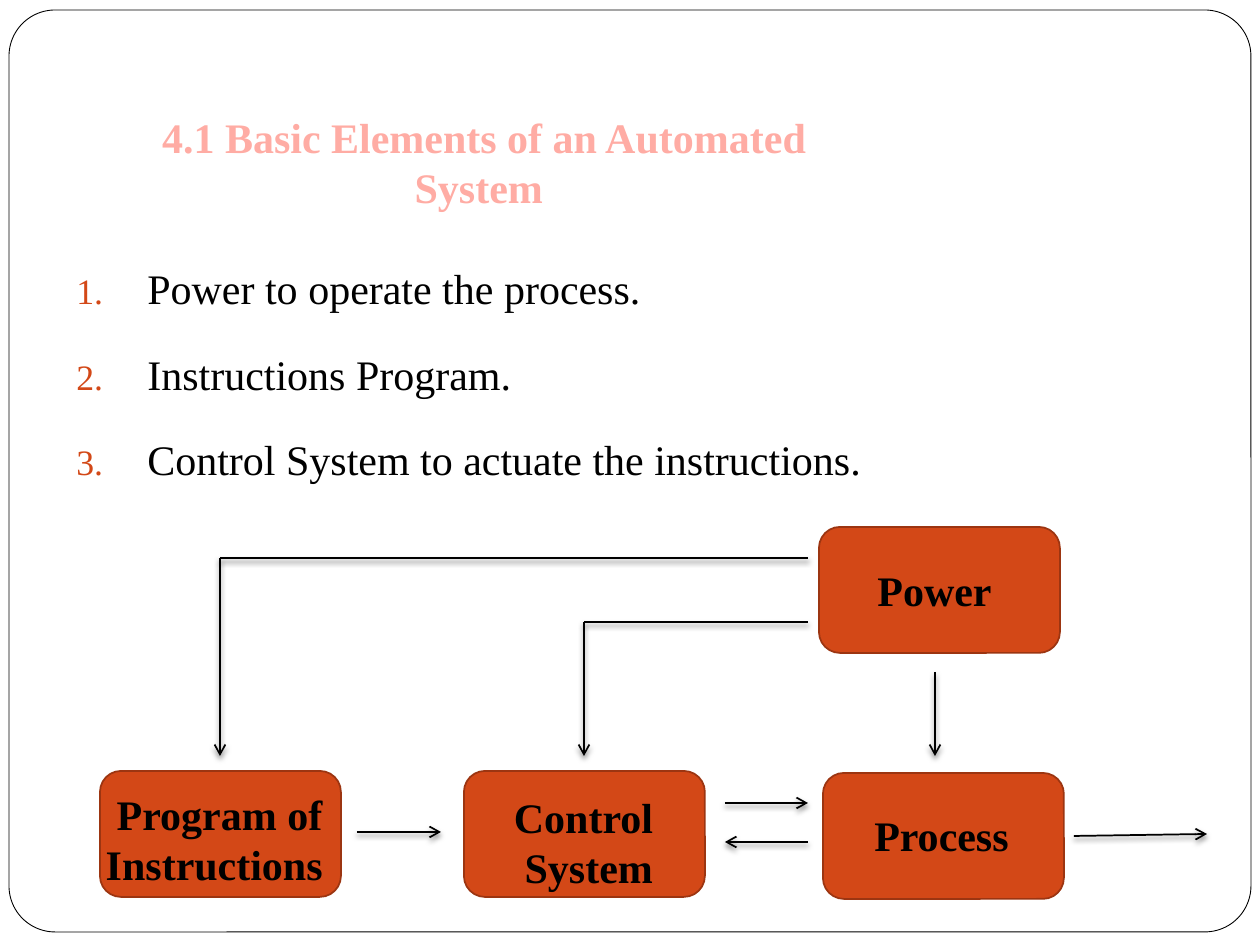
from dataclasses import dataclass

from lxml import etree
from pptx import Presentation
from pptx.dml.color import RGBColor
from pptx.enum.shapes import MSO_CONNECTOR, MSO_SHAPE
from pptx.enum.text import PP_ALIGN
from pptx.oxml import parse_xml
from pptx.oxml.ns import nsdecls, qn
from pptx.util import Pt

ROUNDED = MSO_SHAPE.ROUNDED_RECTANGLE
STRAIGHT = MSO_CONNECTOR.STRAIGHT
CENTER = PP_ALIGN.CENTER
PX = 914400 // 126


@dataclass(frozen=True)
class Theme:
    font: str = "Times New Roman"
    size: int = 24
    ink: str = "000000"
    paper: str = "FFFFFF"
    title: str = "FFACA4"
    accent: str = "D34817"
    edge: str = "9C3511"


THEME = Theme()
STEPS = [
    "Power to operate the process.",
    "Instructions Program.",
    "Control System to actuate the instructions.",
]
BOX_W, BOX_H = 241, 126
LABEL_W = 307
# box left, box top, label left, label top, label lines
BLOCKS = [
    (100, 771, 66, 782, ["Program of Instructions "]),
    (464, 771, 430, 785, ["Control", " System"]),
    (819, 527, 781, 558, ["Power"]),
    (823, 773, 788, 803, ["Process"]),
]
# points from start to end, and whether an arrowhead closes the line
LINES = [
    (935, 672, 935, 756, True),
    (1074, 836, 1207, 834, True),
    (725, 803, 808, 803, True),
    (808, 842, 725, 842, True),
    (357, 832, 441, 832, True),
    (808, 558, 220, 558, False),
    (220, 558, 220, 756, True),
    (808, 622, 584, 622, False),
    (584, 622, 584, 756, True),
]


def px(*values):
    return [v * PX for v in values]


def rgb(value):
    return RGBColor.from_string(value)


def add_rounded(slide, box, fill, edge, width, radius=None):
    s = slide.shapes.add_shape(ROUNDED, *px(*box))
    s.shadow.inherit = False
    s.fill.solid()
    s.fill.fore_color.rgb = rgb(fill)
    s.line.color.rgb = rgb(edge)
    s.line.width = Pt(width)
    if radius is not None:
        s.adjustments[0] = radius


def add_text(slide, box, lines, color=THEME.ink, bold=True, align=CENTER):
    tf = slide.shapes.add_textbox(*px(*box)).text_frame
    tf.word_wrap = True
    tf.text = "\n".join(lines)
    for p in tf.paragraphs:
        p.alignment = align
        for r in p.runs:
            r.font.name = THEME.font
            r.font.size = Pt(THEME.size)
            r.font.bold = bold
            r.font.color.rgb = rgb(color)
    return tf


def add_numbered_list(slide, box, items):
    tf = add_text(slide, box, items, bold=False, align=PP_ALIGN.LEFT)
    indent = 71 * PX
    for p in tf.paragraphs:
        p.line_spacing = 1.5
        p.space_before = Pt(5.8)
        pPr = p._p.get_or_add_pPr()
        pPr.set("marL", str(indent))
        pPr.set("indent", str(-indent))
        color = etree.SubElement(pPr, qn("a:buClr"))
        etree.SubElement(color, qn("a:srgbClr"), val=THEME.accent)
        etree.SubElement(pPr, qn("a:buSzPct"), val="85000")
        etree.SubElement(pPr, qn("a:buFont"), typeface=THEME.font)
        etree.SubElement(pPr, qn("a:buAutoNum"), type="arabicPeriod")


def add_line(slide, x1, y1, x2, y2, arrow):
    """Draw a line with a soft shadow below it, and an open arrowhead if asked."""
    s = slide.shapes.add_connector(STRAIGHT, *px(x1, y1, x2, y2))
    s.line.color.rgb = rgb(THEME.ink)
    s.line.width = Pt(1)
    if arrow:
        etree.SubElement(s.line._get_or_add_ln(), qn("a:tailEnd"), type="arrow")
    s._element.spPr.append(parse_xml(
        f'<a:effectLst {nsdecls("a")}>'
        f'<a:outerShdw blurRad="{Pt(3)}" dist="{Pt(2)}" dir="5400000" rotWithShape="0">'
        f'<a:srgbClr val="{THEME.ink}"><a:alpha val="50000"/></a:srgbClr>'
        '</a:outerShdw></a:effectLst>'))


def main():
    prs = Presentation()
    prs.slide_width, prs.slide_height = px(1260, 945)
    slide = prs.slides.add_slide(prs.slide_layouts[6])

    add_rounded(slide, (9, 10, 1242, 922), THEME.paper, THEME.ink, 0.5, 0.05)
    add_numbered_list(slide, (64, 231, 1134, 624), STEPS)
    for left, top, label_left, label_top, lines in BLOCKS:
        add_rounded(slide, (left, top, BOX_W, BOX_H), THEME.accent, THEME.edge, 1)
        add_text(slide, (label_left, label_top, LABEL_W, 63), lines)
    for line in LINES:
        add_line(slide, *line)
    add_text(slide, (84, 105, 800, 63),
             ["4.1 Basic Elements of an Automated System "], THEME.title)

    prs.save("out.pptx")


if __name__ == "__main__":
    main()
